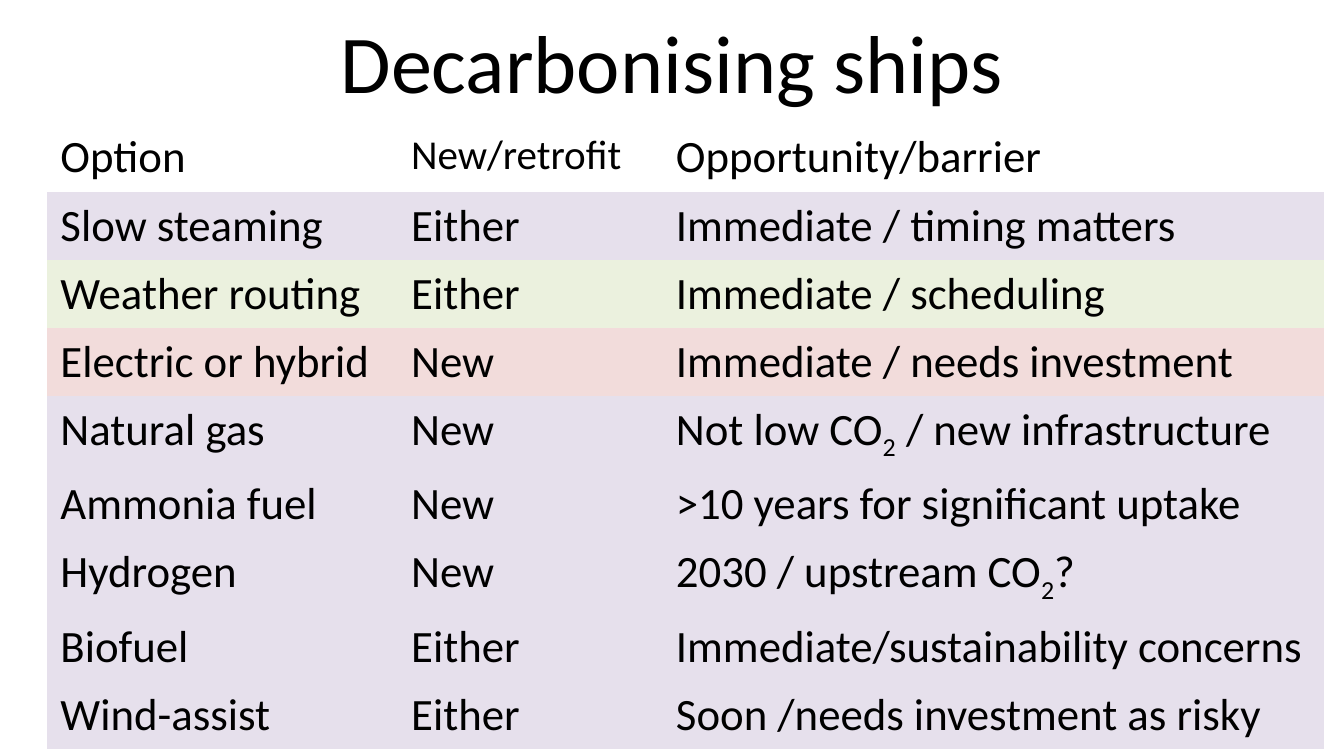
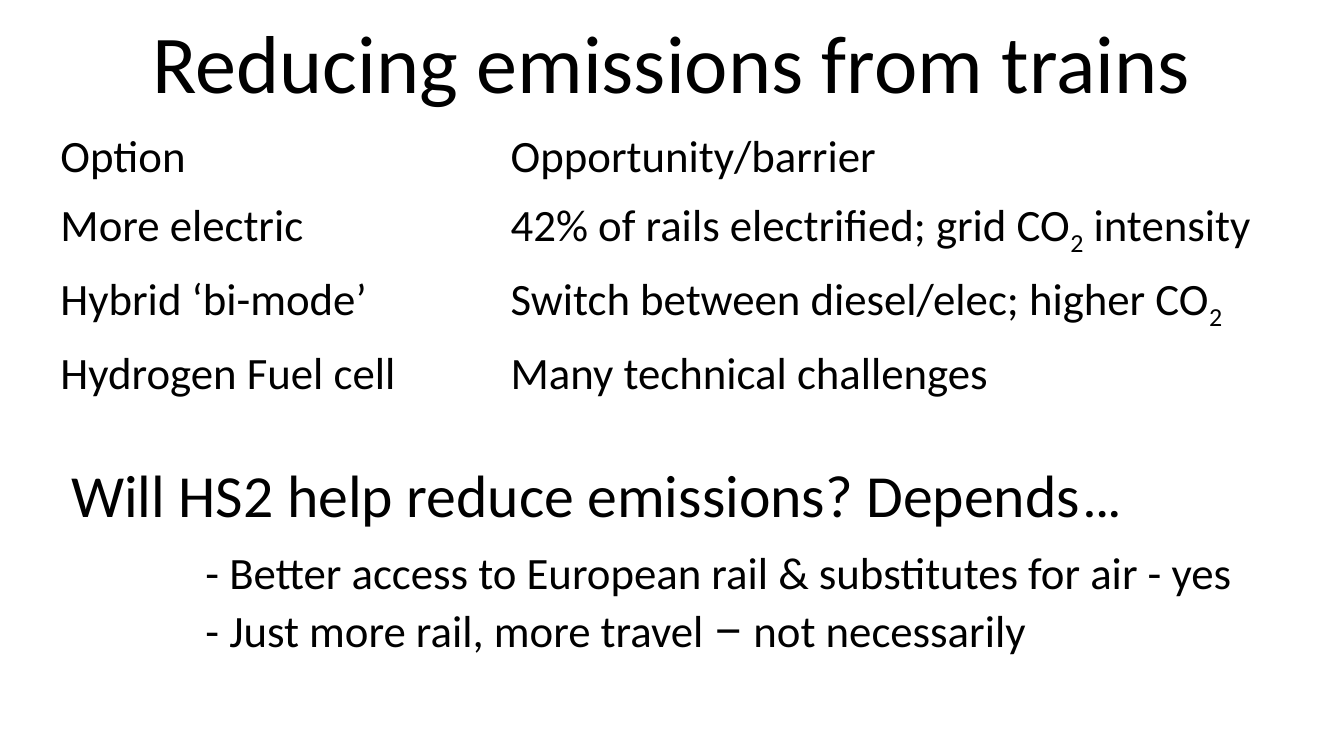
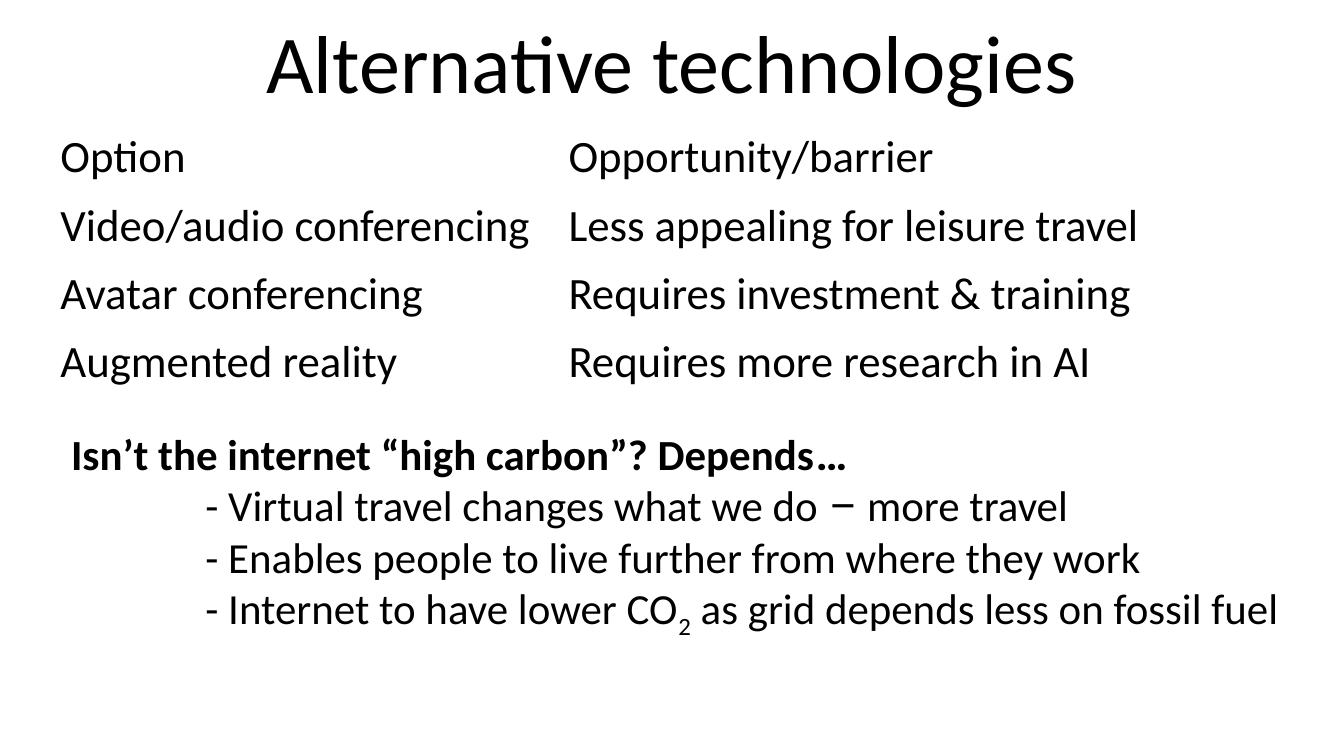
from dataclasses import dataclass
from itertools import groupby

from pptx import Presentation
from pptx.dml.color import RGBColor
from pptx.enum.text import MSO_ANCHOR, MSO_AUTO_SIZE, PP_ALIGN
from pptx.util import Inches, Pt


@dataclass(frozen=True)
class Theme:
    width: float = 10
    height: float = 10 * 9 / 16
    font: str = "Calibri"
    symbol_font: str = "Roboto"
    ink: str = "000000"
    lilac: str = "E6E0EC"
    green: str = "EBF1DE"
    rose: str = "F2DCDB"
    title_size: int = 44
    question_size: int = 32
    body_size: int = 24
    narrow_size: int = 22
    compact_size: int = 23
    table_left: float = 0.35
    table_top: float = 0.92
    row_height: float = 0.41
    point_indent: float = 1


THEME = Theme()
PLAIN_TABLE_STYLE = "{2D5ABB26-0587-4C30-8999-92F81FD0307C}"
SUBSCRIPT = "₂"
SYMBOLS = "…–"

SHIP_ROWS = [
    ("Option", "New/retrofit", "Opportunity/barrier"),
    ("Slow steaming", "Either", "Immediate / timing matters"),
    ("Weather routing", "Either", "Immediate / scheduling"),
    ("Electric or hybrid", "New", "Immediate / needs investment"),
    ("Natural gas", "New", "Not low CO₂ / new infrastructure"),
    ("Ammonia fuel", "New", ">10 years for significant uptake"),
    ("Hydrogen", "New", "2030 / upstream CO₂?"),
    ("Biofuel", "Either", "Immediate/sustainability concerns"),
    ("Wind-assist", "Either", "Soon /needs investment as risky"),
]
SHIP_FILLS = [None, THEME.lilac, THEME.green, THEME.rose] + [THEME.lilac] * 5

TRAIN_ROWS = [
    ("Option", "Opportunity/barrier"),
    ("More electric", "42% of rails electrified; grid CO₂ intensity"),
    ("Hybrid ‘bi-mode’", "Switch between diesel/elec; higher CO₂"),
    ("Hydrogen Fuel cell", "Many technical challenges"),
]
TRAIN_POINTS = [
    "- Better access to European rail & substitutes for air - yes",
    "- Just more rail, more travel – not necessarily",
]

TECHNOLOGY_ROWS = [
    ("Option", "Opportunity/barrier"),
    ("Video/audio conferencing", "Less appealing for leisure travel"),
    ("Avatar conferencing", "Requires investment & training"),
    ("Augmented reality", "Requires more research in AI"),
]
TECHNOLOGY_POINTS = [
    "- Virtual travel changes what we do – more travel",
    "- Enables people to live further from where they work",
    "- Internet to have lower CO₂ as grid depends less on fossil fuel",
]


def character_style(character):
    if character == SUBSCRIPT:
        return "subscript"
    return "symbol" if character in SYMBOLS else "plain"


def write_line(paragraph, line, size, bold=False):
    """Write a line, lowering each ₂ and setting symbols in their own font."""
    for style, characters in groupby(line, character_style):
        run = paragraph.add_run()
        run.text = "".join(characters).replace(SUBSCRIPT, "2")
        run.font.name = THEME.symbol_font if style == "symbol" else THEME.font
        run.font.size = Pt(size)
        run.font.bold = bold
        run.font.color.rgb = RGBColor.from_string(THEME.ink)
        if style == "subscript":
            run.font._element.set("baseline", "-25000")


def add_titled_slide(deck, heading):
    slide = deck.slides.add_slide(deck.slide_layouts[5])
    title = slide.shapes.title
    title.left, title.top = Inches(THEME.width * 0.05), Inches(-0.02)
    title.width, title.height = Inches(THEME.width * 0.9), Inches(0.94)
    title.text_frame.vertical_anchor = MSO_ANCHOR.MIDDLE
    paragraph = title.text_frame.paragraphs[0]
    paragraph.alignment = PP_ALIGN.CENTER
    write_line(paragraph, heading, THEME.title_size)
    return slide


def add_options_table(slide, rows, column_widths, fills=None):
    table = slide.shapes.add_table(
        len(rows), len(column_widths),
        Inches(THEME.table_left), Inches(THEME.table_top),
        Inches(sum(column_widths)), Inches(THEME.row_height * len(rows)),
    ).table
    table.first_row = table.horz_banding = False
    table._tbl.tblPr[0].text = PLAIN_TABLE_STYLE
    for column, width in zip(table.columns, column_widths):
        column.width = Inches(width)
    for row, texts, fill in zip(table.rows, rows, fills or [None] * len(rows)):
        for cell, text in zip(row.cells, texts):
            size = THEME.narrow_size if text == "New/retrofit" else THEME.body_size
            write_line(cell.text_frame.paragraphs[0], text, size)
            if fill:
                cell.fill.solid()
                cell.fill.fore_color.rgb = RGBColor.from_string(fill)
            else:
                cell.fill.background()
    return table


def add_discussion(slide, top, height, question, points, question_size,
                   point_size, bold=False, gaps=(0, 0)):
    """Add a question with indented points; gaps go before the first and later ones."""
    box = slide.shapes.add_textbox(
        Inches(0.43), Inches(top), Inches(9.29), Inches(height))
    frame = box.text_frame
    frame.word_wrap = True
    frame.auto_size = MSO_AUTO_SIZE.SHAPE_TO_FIT_TEXT
    write_line(frame.paragraphs[0], question, question_size, bold)
    for index, point in enumerate(points):
        paragraph = frame.add_paragraph()
        paragraph._p.get_or_add_pPr().set("marL", str(Inches(THEME.point_indent)))
        paragraph.space_before = Pt(gaps[min(index, 1)])
        write_line(paragraph, point, point_size)


def main():
    deck = Presentation()
    deck.slide_width = Inches(THEME.width)
    deck.slide_height = Inches(THEME.height)

    ships = add_titled_slide(deck, "Decarbonising ships")
    ship_table = add_options_table(ships, SHIP_ROWS, (2.61, 1.97, 4.92), SHIP_FILLS)
    electric_row = ship_table.rows[3]
    electric_row.height = Inches(0.44)

    trains = add_titled_slide(deck, "Reducing emissions from trains")
    add_options_table(trains, TRAIN_ROWS, (3.35, 6.3))
    add_discussion(trains, 3.36, 1.85, "Will HS2 help reduce emissions? Depends…",
                   TRAIN_POINTS, THEME.question_size, THEME.body_size, gaps=(8, 2))

    technologies = add_titled_slide(deck, "Alternative technologies")
    add_options_table(technologies, TECHNOLOGY_ROWS, (3.78, 5.87))
    add_discussion(technologies, 3.13, 1.91,
                   "Isn’t the internet “high carbon”? Depends…", TECHNOLOGY_POINTS,
                   THEME.compact_size, THEME.compact_size, bold=True)

    deck.save("out.pptx")


if __name__ == "__main__":
    main()
